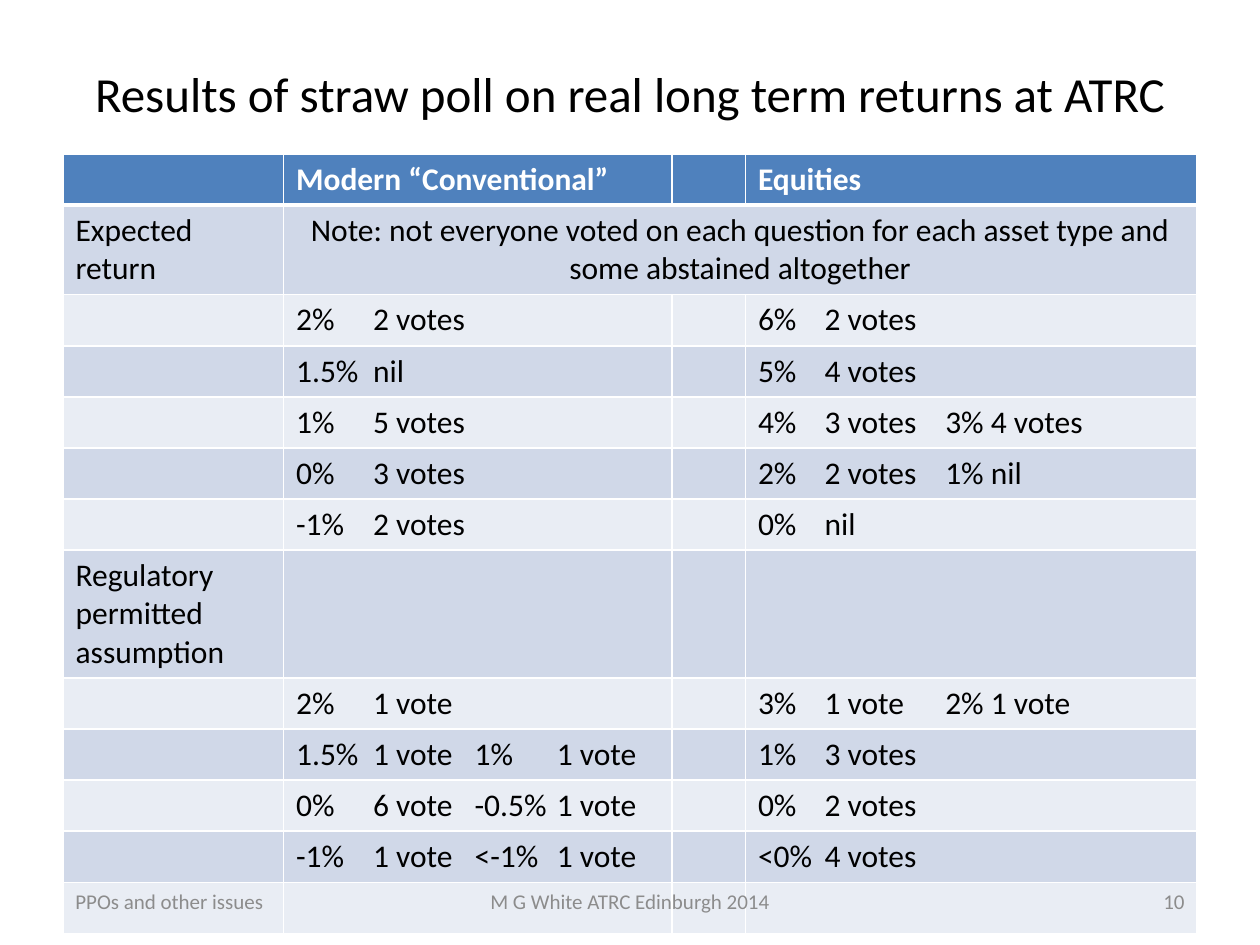
from lxml.etree import SubElement
from pptx import Presentation
from pptx.dml.color import RGBColor
from pptx.enum.text import MSO_ANCHOR, PP_ALIGN
from pptx.oxml import parse_xml
from pptx.oxml.ns import nsdecls, qn
from pptx.util import Pt

LEFT, MID, RIGHT = PP_ALIGN.LEFT, PP_ALIGN.CENTER, PP_ALIGN.RIGHT
WIDTHS = [126, 222, 42, 258]
TABS = [[], [44, 102, 149], [], [38, 107, 133]]
ROW = 29.2
HEIGHTS = {1: 51.2, 7: 73}
NOTE = ("Note: not everyone voted on each question for each asset type "
        "and some abstained altogether")
ROWS = [
    ("", "Modern “Conventional”", "", "Equities"),
    ("Expected return", NOTE, "", ""),
    ("", "2%\t2 votes", "", "6%\t2 votes"),
    ("", "1.5%\tnil", "", "5%\t4 votes"),
    ("", "1%\t5 votes", "", "4%\t3 votes\t3%\t4 votes"),
    ("", "0%\t3 votes", "", "2%\t2 votes\t1%\tnil"),
    ("", "-1%\t2 votes", "", "0%\tnil"),
    ("Regulatory permitted assumption", "", "", ""),
    ("", "2%\t1 vote", "", "3%\t1 vote\t2%\t1 vote"),
    ("", "1.5%\t1 vote\t1%\t1 vote", "", "1%\t3 votes"),
    ("", "0%\t6 vote\t-0.5%\t1 vote", "", "0%\t2 votes"),
    ("", "-1%\t1 vote\t<-1%\t1 vote", "", "<0%\t4 votes"),
    ("", "", "", ""),
]


def color(code):
    return RGBColor.from_string(code)


class Deck:
    styles = {
        "title": {"size": Pt(28), "bold": False, "name": "Calibri"},
        "head": {"size": Pt(18), "bold": True, "name": "Calibri"},
        "body": {"size": Pt(18), "bold": False, "name": "Calibri"},
        "foot": {"size": Pt(12), "bold": False, "name": "Calibri"},
    }
    inks = {"title": "000000", "head": "FFFFFF",
            "body": "000000", "foot": "8C8C8C"}
    bands = ["E9EDF4", "D0D8E8"]

    def __init__(self, width, height):
        self.file = Presentation()
        self.file.slide_width, self.file.slide_height = Pt(width), Pt(height)
        self.slide = self.file.slides.add_slide(self.file.slide_layouts[6])

    def label(self, frame, text, style, align=LEFT, tabs=()):
        para = frame.paragraphs[0]
        para.alignment = align
        if "\t" in text:
            stops = SubElement(para._p.get_or_add_pPr(), qn("a:tabLst"))
            for stop in tabs:
                SubElement(stops, qn("a:tab"), pos=str(Pt(stop)), algn="l")
        if not text:
            para.font.size = self.styles[style]["size"]
            return
        run = para.add_run()
        run.text = text
        for key, value in self.styles[style].items():
            setattr(run.font, key, value)
        run.font.color.rgb = color(self.inks[style])

    def text(self, left, top, width, height, text, style, align):
        box = self.slide.shapes.add_textbox(
            Pt(left), Pt(top), Pt(width), Pt(height))
        frame = box.text_frame
        frame.word_wrap = True
        frame.vertical_anchor = MSO_ANCHOR.MIDDLE
        self.label(frame, text, style, align)

    def border(self, cell, row):
        thick = {"T": 3 if row == 1 else 1, "B": 3 if row == 0 else 1}
        for spot, side in enumerate("LRTB"):
            line = parse_xml(
                f'<a:ln{side} {nsdecls("a")} w="{Pt(thick.get(side, 1))}">'
                '<a:solidFill><a:srgbClr val="FFFFFF"/></a:solidFill>'
                f'</a:ln{side}>')
            cell._tc.get_or_add_tcPr().insert(spot, line)

    def table(self, left, top, rows):
        sizes = [HEIGHTS.get(i, ROW) for i in range(len(rows))]
        grid = self.slide.shapes.add_table(
            len(rows), len(WIDTHS), Pt(left), Pt(top),
            Pt(sum(WIDTHS)), Pt(sum(sizes))).table
        for col, width in zip(grid.columns, WIDTHS):
            col.width = Pt(width)
        for i, row in enumerate(rows):
            grid.rows[i].height = Pt(sizes[i])
            for j, text in enumerate(row):
                cell = grid.cell(i, j)
                cell.fill.solid()
                fill = self.bands[i % 2] if i else "4F81BD"
                cell.fill.fore_color.rgb = color(fill)
                self.border(cell, i)
                self.label(cell.text_frame, text, "body" if i else "head",
                           MID if text == NOTE else LEFT, TABS[j])
        grid.cell(1, 1).merge(grid.cell(1, 3))


def main():
    deck = Deck(720, 540)
    deck.text(36, 21.6, 648, 62.6,
              "Results of straw poll on real long term returns at ATRC",
              "title", MID)
    deck.table(36, 88, ROWS)
    for left, width, text, align in [
        (36, 168, "PPOs and other issues", LEFT),
        (246, 228, "M G White ATRC Edinburgh 2014", MID),
        (516, 168, "10", RIGHT),
    ]:
        deck.text(left, 500.5, width, 28.8, text, "foot", align)
    deck.file.save("out.pptx")


if __name__ == "__main__":
    main()
